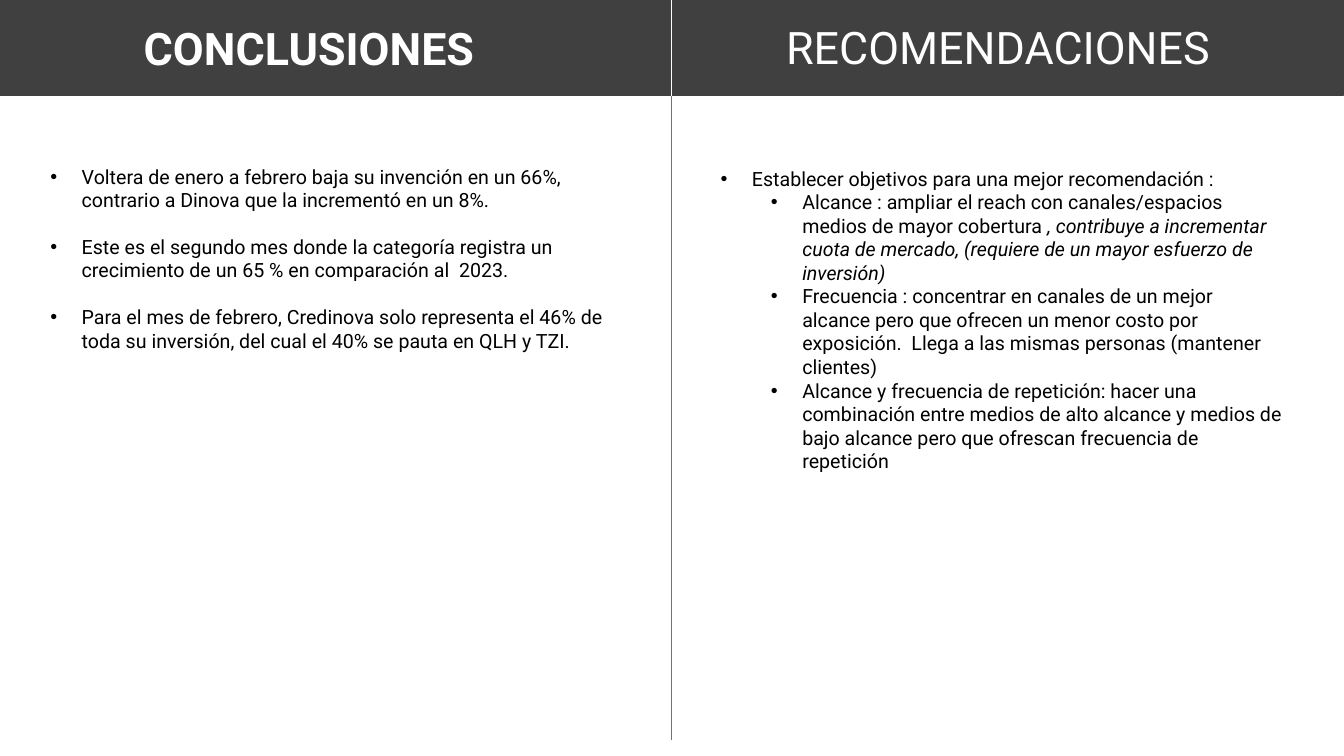
from lxml.etree import SubElement
from pptx import Presentation
from pptx.dml.color import RGBColor
from pptx.enum.shapes import MSO_CONNECTOR as Connector, MSO_SHAPE as Shape
from pptx.enum.text import MSO_ANCHOR as Anchor, PP_ALIGN as Align
from pptx.oxml.ns import qn
from pptx.util import Cm, Pt

DARK, WHITE, BLACK, GREEN = "404040", "FFFFFF", "000000", "1D9A78"


def color(hex_code):
    return RGBColor.from_string(hex_code)


class SlideBuilder:
    font = "Roboto"
    title_size, body_size = 32, 14
    hanging = 0.79
    level_step = 1.27

    def __init__(self, slide):
        self.shapes = slide.shapes

    def run(self, paragraph, text, size, hex_code, bold=False, italic=False):
        run = paragraph.add_run()
        run.text = text
        font = run.font
        font.name, font.size = self.font, Pt(size)
        font.bold, font.italic = bold, italic
        font.color.rgb = color(hex_code)

    def text_box(self, left, top, width, height):
        frame = self.shapes.add_textbox(Cm(left), Cm(top), Cm(width), Cm(height)).text_frame
        frame.word_wrap = True
        return frame

    def title(self, frame, text, bold=False):
        paragraph = frame.paragraphs[0]
        paragraph.alignment = Align.LEFT
        self.run(paragraph, text, self.title_size, WHITE, bold)

    def band(self, left, top, width, height, hex_code):
        band = self.shapes.add_shape(Shape.RECTANGLE, Cm(left), Cm(top), Cm(width), Cm(height))
        band.shadow.inherit = False
        band.fill.solid()
        band.fill.fore_color.rgb = color(hex_code)
        band.line.color.rgb = color(hex_code)
        band.line.width = Pt(1)
        band.text_frame.vertical_anchor = Anchor.MIDDLE
        return band.text_frame

    def divider(self, x, top, bottom, hex_code):
        divider = self.shapes.add_connector(Connector.STRAIGHT, Cm(x), Cm(top), Cm(x), Cm(bottom))
        divider.line.color.rgb = color(hex_code)
        divider.line.width = Pt(0.5)
        SubElement(divider._element.spPr, qn("a:effectLst"))

    def bullets(self, left, top, width, height, items, gap=0):
        """Each item is a level followed by (text, italic) pairs."""
        frame = self.text_box(left, top, width, height)
        frame.margin_top = Cm(0.72)
        for index, (level, *parts) in enumerate(items):
            paragraph = frame.add_paragraph() if index else frame.paragraphs[0]
            paragraph.level = level
            paragraph.space_before = Pt(gap if index else 0)
            properties = paragraph._p.get_or_add_pPr()
            properties.set("marL", str(Cm(self.hanging + level * self.level_step)))
            properties.set("indent", str(-Cm(self.hanging)))
            SubElement(properties, qn("a:buFont"), typeface="Arial")
            SubElement(properties, qn("a:buChar"), char="•")
            for text, italic in parts:
                self.run(paragraph, text, self.body_size, BLACK, italic=italic)


CONCLUSIONS = [
    (0, ("Voltera de enero a febrero baja su invención en un 66%, "
         "contrario a Dinova que la incrementó en un 8%.", False)),
    (0, ("Este es el segundo mes donde la categoría registra un "
         "crecimiento de un 65 % en comparación al  2023.", False)),
    (0, ("Para el mes de febrero, Credinova solo representa el 46% de "
         "toda su inversión, del cual el 40% se pauta en QLH y TZI.", False)),
]
RECOMMENDATIONS = [
    (0, ("Establecer objetivos para una mejor recomendación :", False)),
    (1, ("Alcance : ampliar el reach con canales/espacios medios de mayor cobertura ", False),
     (", contribuye a incrementar cuota de mercado, "
      "(requiere de un mayor esfuerzo de inversión)", True)),
    (1, ("Frecuencia : concentrar en canales de un mejor alcance pero que ofrecen un menor "
         "costo por exposición.  Llega a las mismas personas (mantener clientes)", False)),
    (1, ("Alcance y frecuencia de repetición: hacer una combinación entre medios de alto alcance "
         "y medios de bajo alcance pero que ofrescan frecuencia de repetición", False)),
]


def main():
    deck = Presentation()
    deck.slide_width, deck.slide_height = Cm(33.87), Cm(19.05)
    builder = SlideBuilder(deck.slides.add_slide(deck.slide_layouts[6]))
    header_height, middle, column_width = 2.41, 16.92, 14.71

    # Conclusions and header band
    builder.bullets(1.02, 3.43, column_width, 11.33, CONCLUSIONS, gap=16.5)
    header = builder.band(-0.03, 0, 33.88, header_height, DARK)
    header.margin_left = Cm(3.65)
    builder.title(header, "CONCLUSIONES", bold=True)

    # Divider between the columns
    builder.divider(middle, header_height, 18.64, GREEN)
    builder.divider(middle, 0, header_height, WHITE)

    # Recommendations
    builder.title(builder.text_box(19.56, 0.38, 13.06, 1.63), "RECOMENDACIONES")
    builder.bullets(17.91, 3.48, column_width, 7.34, RECOMMENDATIONS)

    deck.save("out.pptx")


if __name__ == "__main__":
    main()
